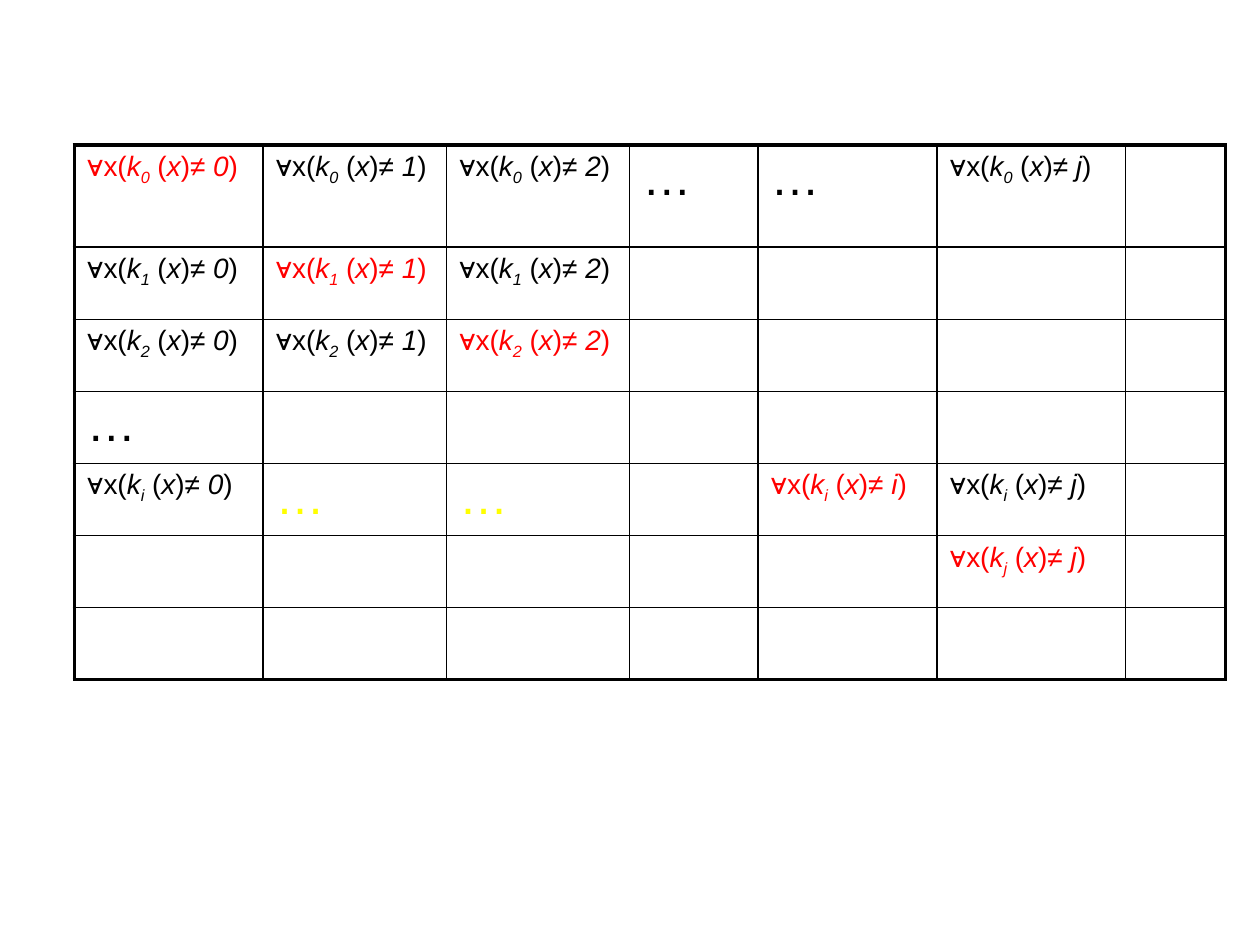
"""Builds a slide with the diagonal table of formulas."""
import lxml.etree
import pptx
import pptx.dml.color
import pptx.oxml
import pptx.oxml.ns
import pptx.util

COLORS = {"text": "000000", "diagonal": "FF0000", "faint": "FFFF00", "border": "000000"}
INDICES = ["0", "1", "2", None, "i", "j", None]
VALUES = ["0", "1", "2", None, "i", "j", None]
FORMULAS = {"0": "012j", "1": "012", "2": "012", "i": "0ij", "j": "j"}
ELLIPSES = {(0, 3): "text", (0, 4): "text", (3, 0): "text", (4, 1): "faint", (4, 2): "faint"}
COLUMN_WIDTHS = [107.75, 104.9, 104.75, 73.25, 102.4, 107.75, 57]
ROW_HEIGHTS = [58.5] + [41.2] * 6


class SlideBuilder:
    """Holds the style and the current slide."""

    font_name = "Arial"
    formula_size = 16
    ellipsis_size = 28
    inner_border = 1
    outer_border = 2.25

    def __init__(self, slide):
        self.slide = slide

    def add_grid(self, left, top, widths, heights):
        """Adds an unfilled table with a thicker outer border."""
        frame = self.slide.shapes.add_table(
            len(heights), len(widths), pptx.util.Pt(left), pptx.util.Pt(top),
            pptx.util.Pt(sum(widths)), pptx.util.Pt(sum(heights)))
        grid = frame.table
        grid.first_row = grid.horz_banding = False
        for column, width in zip(grid.columns, widths):
            column.width = pptx.util.Pt(width)
        for row, height in zip(grid.rows, heights):
            row.height = pptx.util.Pt(height)
        last_row, last_column = len(heights) - 1, len(widths) - 1
        for r in range(len(heights)):
            for c in range(len(widths)):
                outer = {"lnL": c == 0, "lnR": c == last_column,
                         "lnT": r == 0, "lnB": r == last_row}
                self.set_borders(grid.cell(r, c), outer)
                grid.cell(r, c).fill.background()
        return grid

    def set_borders(self, cell, outer):
        """Draws the four sides of a cell."""
        properties = cell._tc.get_or_add_tcPr()
        for side, is_outer in outer.items():
            weight = self.outer_border if is_outer else self.inner_border
            line = lxml.etree.SubElement(properties, pptx.oxml.ns.qn(f"a:{side}"),
                                         w=str(int(pptx.util.Pt(weight))))
            fill = lxml.etree.SubElement(line, pptx.oxml.ns.qn("a:solidFill"))
            lxml.etree.SubElement(fill, pptx.oxml.ns.qn("a:srgbClr"), val=COLORS["border"])

    def start_paragraph(self, cell):
        """Returns the cell's paragraph, spaced 20% before."""
        paragraph = cell.text_frame.paragraphs[0]
        spacing = lxml.etree.SubElement(paragraph._p.get_or_add_pPr(),
                                        pptx.oxml.ns.qn("a:spcBef"))
        lxml.etree.SubElement(spacing, pptx.oxml.ns.qn("a:spcPct"), val="20000")
        return paragraph

    def add_run(self, paragraph, text, size, color, italic=False, subscript=False):
        """Adds one formatted run."""
        run = paragraph.add_run()
        run.text = text
        run.font.name = self.font_name
        run.font.size = pptx.util.Pt(size)
        run.font.italic = italic
        run.font.color.rgb = pptx.dml.color.RGBColor.from_string(COLORS[color])
        if subscript:
            run._r.get_or_add_rPr().set("baseline", "-25000")

    def add_formula(self, cell, index, value):
        """Writes one formula, highlighted on the diagonal."""
        color = "diagonal" if index == value else "text"
        paragraph = self.start_paragraph(cell)
        for text, italic, subscript in [
                ("∀x(", False, False), ("k", True, False), (index, True, True),
                (" (", False, False), ("x", True, False), (")≠ ", False, False),
                (value, True, False), (")", False, False)]:
            self.add_run(paragraph, text, self.formula_size, color, italic, subscript)

    def add_ellipsis(self, cell, color):
        """Writes a large ellipsis."""
        self.add_run(self.start_paragraph(cell), "…", self.ellipsis_size, color)


def main():
    """Builds and saves the presentation."""
    presentation = pptx.Presentation()
    presentation.slide_width = pptx.util.Pt(720)
    presentation.slide_height = pptx.util.Pt(540)
    builder = SlideBuilder(presentation.slides.add_slide(presentation.slide_layouts[6]))
    grid = builder.add_grid(42.5, 82.8, COLUMN_WIDTHS, ROW_HEIGHTS)
    for index, values in FORMULAS.items():
        for value in values:
            cell = grid.cell(INDICES.index(index), VALUES.index(value))
            builder.add_formula(cell, index, value)
    for (row, column), color in ELLIPSES.items():
        builder.add_ellipsis(grid.cell(row, column), color)
    presentation.save("out.pptx")


if __name__ == "__main__":
    main()
